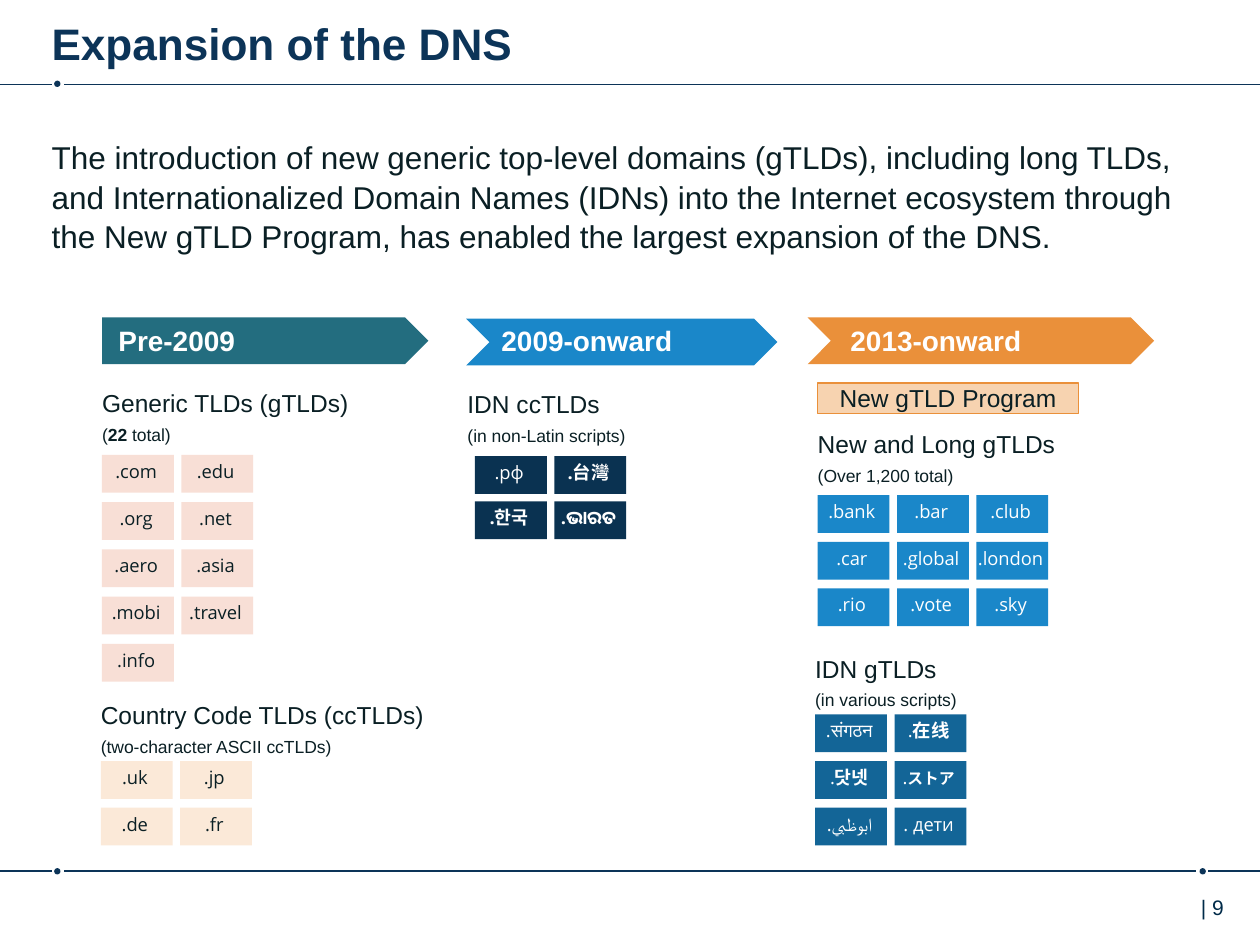
"""Build the slide on the expansion of the DNS."""
import dataclasses

import pptx
import pptx.dml.color
import pptx.enum.shapes
import pptx.enum.text
import pptx.oxml
import pptx.oxml.ns
import pptx.util

Inches, Pt = pptx.util.Inches, pptx.util.Pt
RGB = pptx.dml.color.RGBColor.from_string
SHAPE = pptx.enum.shapes.MSO_SHAPE
ALIGN = pptx.enum.text.PP_ALIGN
ANCHOR = pptx.enum.text.MSO_ANCHOR


@dataclasses.dataclass(frozen=True)
class Theme:
    navy: str = "0C3458"
    ink: str = "0A1F24"
    page: str = "002B49"
    white: str = "FFFFFF"
    teal: str = "236D7F"
    blue: str = "1A87C9"
    orange: str = "EA903A"
    peach: str = "F7D3B0"
    pink: str = "F8DFD6"
    cream: str = "FBE9D8"
    midnight: str = "0A3251"
    steel: str = "136597"
    font: str = "Arial"
    chip_font: str = "Open Sans"
    cjk_font: str = "Noto Sans CJK SC"
    title: float = 25.2
    body: float = 18
    era: float = 16
    heading: float = 14
    number: float = 12
    chip: float = 10.5
    note: float = 10
    kana: float = 9


T = Theme()


def add_box(left, top, width, height, insets, kind=None, fill=None):
    """Add a text box, or a filled shape when a kind is given."""
    place = [Inches(v) for v in (left, top, width, height)]
    if kind is None:
        sp = s.shapes.add_textbox(*place)
    else:
        sp = s.shapes.add_shape(kind, *place)
        sp.shadow.inherit = False
        sp.fill.solid()
        sp.fill.fore_color.rgb = RGB(fill)
        sp.line.fill.background()
    tf = sp.text_frame
    tf.word_wrap = True
    tf.vertical_anchor = ANCHOR.TOP
    tf.margin_left, tf.margin_top, tf.margin_right, tf.margin_bottom = map(Inches, insets)
    return sp


def add_run(p, text, size, color, bold=False, font=T.font):
    """Append a formatted run to a paragraph."""
    r = p.add_run()
    r.text = text
    r.font.size = Pt(size)
    r.font.bold = bold
    r.font.name = font
    r.font.color.rgb = RGB(color)
    if font == T.cjk_font:
        ea = r.font._element.makeelement(pptx.oxml.ns.qn("a:ea"), {"typeface": font})
        r.font._element.append(ea)


prs = pptx.Presentation()
prs.slide_width, prs.slide_height = Inches(10), Inches(7.5)
s = prs.slides.add_slide(prs.slide_layouts[6])

for x, y in [(0.43, 0.64), (0.43, 6.89), (9.52, 6.89)]:
    add_box(x, y, 0.05, 0.05, (0, 0, 0, 0), SHAPE.OVAL, T.navy)

for start, end, y in [(0, 0.41, 0.67), (0.51, 10, 0.67),
                      (0, 0.41, 6.91), (0.51, 9.49, 6.91), (9.59, 10, 6.91)]:
    line = s.shapes.add_connector(pptx.enum.shapes.MSO_CONNECTOR.STRAIGHT,
                                  Inches(start), Inches(y), Inches(end), Inches(y))
    line.line.color.rgb = RGB(T.navy)
    line.line.width = Pt(1)
    line._element.spPr.append(pptx.oxml.parse_xml(
        "<a:effectLst %s/>" % pptx.oxml.ns.nsdecls("a")))

sp = add_box(9.29, 7.05, 0.71, 0.4, (0.24, 0.05, 0, 0.05))
add_run(sp.text_frame.paragraphs[0], "| 9", T.number, T.page)

sp = add_box(0.41, 0.05, 8.76, 0.49, (0, 0.08, 0, 0))
add_run(sp.text_frame.paragraphs[0], "Expansion of the DNS", T.title, T.navy, True)

sp = add_box(0.41, 1.08, 9.04, 0.91, (0, 0, 0, 0))
p = sp.text_frame.paragraphs[0]
p.line_spacing = 1.05
add_run(p, "The introduction of new generic top-level domains (gTLDs), including long TLDs, "
           "and Internationalized Domain Names (IDNs) into the Internet ecosystem through "
           "the New gTLD Program, has enabled the largest expansion of the DNS.", T.body, T.ink)

eras = [
    ("Pre-2009", SHAPE.PENTAGON, T.teal, 0.81, 2.52, 2.59, 0.87, 1.39),
    ("2009-onward", SHAPE.CHEVRON, T.blue, 3.7, 2.53, 2.47, 3.91, 1.92),
    ("2013-onward", SHAPE.CHEVRON, T.orange, 6.41, 2.52, 2.75, 6.68, 3.2),
]
for label, kind, fill, left, top, width, text_left, text_width in eras:
    add_box(left, top, width, 0.37, (0, 0, 0, 0), kind, fill)
    sp = add_box(text_left, 2.52, text_width, 0.38, (0.07, 0.05, 0.1, 0.05))
    add_run(sp.text_frame.paragraphs[0], label, T.era, T.white, True)

sp = add_box(6.49, 3.04, 2.07, 0.24, (0, 0, 0, 0), SHAPE.RECTANGLE, T.peach)
sp.line.color.rgb = RGB(T.orange)
sp.line.width = Pt(0.75)
p = sp.text_frame.paragraphs[0]
p.alignment = ALIGN.CENTER
add_run(p, "New gTLD Program", T.heading, T.ink)

headings = [
    (0.81, 2.96, 2.28, 0.6, "Generic TLDs (gTLDs)", [("(", False), ("22", True), (" total)", False)]),
    (0.8, 5.44, 2.75, 0.6, "Country Code TLDs (ccTLDs)", [("(two-character ASCII ccTLDs)", False)]),
    (3.71, 2.97, 1.71, 0.61, "IDN ccTLDs", [("(in non-Latin scripts)", False)]),
    (6.49, 3.29, 2.07, 0.87, "New and Long gTLDs", [("(Over 1,200 total)", False)]),
    (6.47, 5.07, 1.83, 0.6, "IDN gTLDs", [("(in various scripts)", False)]),
]
for left, top, width, height, heading, note in headings:
    tf = add_box(left, top, width, height, (0, 0.05, 0.1, 0.05)).text_frame
    add_run(tf.paragraphs[0], heading, T.heading, T.ink)
    p = tf.add_paragraph()
    for text, bold in note:
        add_run(p, text, T.note, T.ink, bold)
    for p in tf.paragraphs:
        p.line_spacing = 1.3

chip_groups = [
    (0.81, 3.61, 5.11, 2, T.pink, T.ink,
     [".com", ".edu", ".org", ".net", ".aero", ".asia", ".mobi", ".travel", ".info"]),
    (0.8, 6.04, 6.41, 2, T.cream, T.ink, [".uk", ".jp", ".de", ".fr"]),
    (3.77, 3.62, 3.98, 2, T.midnight, T.white, [".рф", ".台灣", ".한국", ".ଭାରତ"]),
    (6.49, 3.93, 4.67, 3, T.blue, T.white,
     [".bank", ".bar", ".club", ".car", ".global", ".london", ".rio", ".vote", ".sky"]),
    (6.47, 5.67, 6.41, 2, T.steel, T.white,
     [".संगठन", ".在线", ".닷넷", ".ストア", ".ابوظبي", ". дети"]),
]
bold_chips = {".台灣", ".한국", ".ଭାରତ"}
tail_styles = {".台灣": (T.cjk_font, T.chip), ".在线": (T.cjk_font, T.chip),
               ".닷넷": (T.cjk_font, T.chip), ".ストア": ("Lato", T.kana)}
for left, first_top, last_top, columns, fill, color, labels in chip_groups:
    row_pitch = (last_top - first_top) / ((len(labels) - 1) // columns)
    for i, label in enumerate(labels):
        row, column = divmod(i, columns)
        sp = add_box(left + column * 0.63, first_top + row * row_pitch, 0.57, 0.3,
                     (0.07, 0.04, 0.1, 0.04), SHAPE.RECTANGLE, fill)
        sp.text_frame.word_wrap = False
        p = sp.text_frame.paragraphs[0]
        p.alignment = ALIGN.CENTER
        bold = label in bold_chips
        if label in tail_styles:
            font, size = tail_styles[label]
            add_run(p, label[0], T.chip, color, bold, T.chip_font)
            add_run(p, label[1:], size, color, True, font)
        else:
            add_run(p, label, T.chip, color, bold, T.chip_font)

prs.save("out.pptx")
